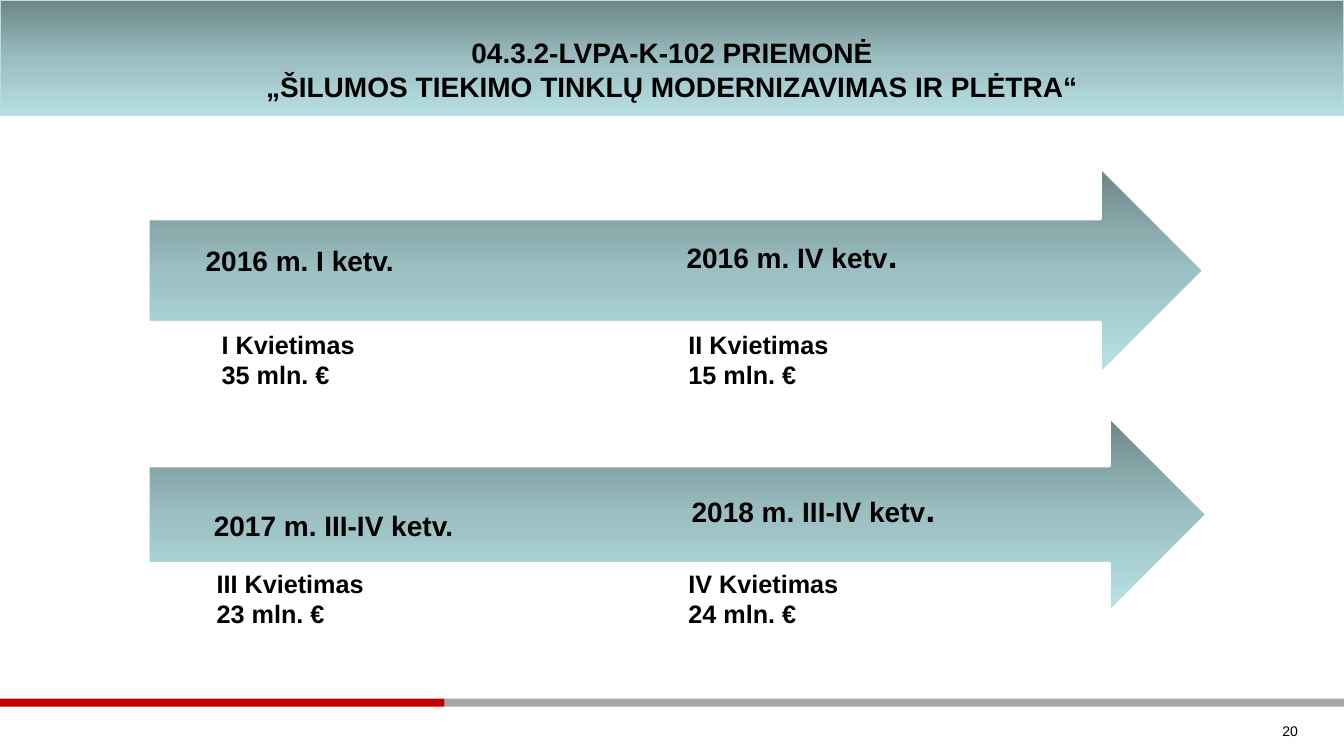
from copy import deepcopy

from pptx import Presentation
from pptx.dml.color import RGBColor
from pptx.enum.shapes import MSO_SHAPE
from pptx.enum.text import MSO_ANCHOR, MSO_AUTO_SIZE, PP_ALIGN
from pptx.util import Inches, Pt

RECT, ARROW = MSO_SHAPE.RECTANGLE, MSO_SHAPE.RIGHT_ARROW
TOP, MIDDLE = MSO_ANCHOR.TOP, MSO_ANCHOR.MIDDLE
LEFT, CENTER, RIGHT = PP_ALIGN.LEFT, PP_ALIGN.CENTER, PP_ALIGN.RIGHT
FIXED = MSO_AUTO_SIZE.NONE


def rgb(value):
    return RGBColor.from_string(value)


def add_text(p, text, font="Arial", size=18, bold=True, color="000000"):
    r = p.add_run()
    r.text = text
    r.font.name, r.font.size, r.font.bold = font, Pt(size), bold
    r.font.color.rgb = rgb(color)


class SlideBuilder:
    TITLE_COLORS = ("6D8587", "9ABDC0", "B7E0E4")
    ARROW_COLORS = ("6D8688", "9BBFC2", "B8E3E6")

    def __init__(self, prs):
        self.s = prs.slides.add_slide(prs.slide_layouts[5])

    def gradient(self, sp, colors, line, width):
        """Vertical three-colour gradient, darkest at the top."""
        sp.fill.gradient()
        sp.fill.gradient_angle = 270
        first = sp._element.spPr.gradFill.gsLst[0]
        first.addnext(deepcopy(first))
        for stop, color, position in zip(sp.fill.gradient_stops, colors, (0, 0.5, 1)):
            stop.color.rgb = rgb(color)
            stop.position = position
        sp.line.color.rgb = rgb(line)
        sp.line.width = Pt(width)

    def title(self, lines, x, y, w, h):
        sp = self.s.shapes.title
        sp.left, sp.top, sp.width, sp.height = map(Inches, (x, y, w, h))
        self.gradient(sp, self.TITLE_COLORS, "BADDE1", 0.75)
        tf = sp.text_frame
        tf.auto_size, tf.vertical_anchor = FIXED, MIDDLE
        tf.margin_top, tf.margin_bottom = Inches(0.28), Inches(0.05)
        p = tf.paragraphs[0]
        p.alignment = CENTER
        for i, line in enumerate(lines):
            if i:
                p.add_line_break()
            add_text(p, line, size=20)

    def shape(self, kind, x, y, w, h):
        sp = self.s.shapes.add_shape(kind, *map(Inches, (x, y, w, h)))
        sp.shadow.inherit = False
        return sp

    def bar(self, x, y, w, h, color):
        sp = self.shape(RECT, x, y, w, h)
        sp.fill.solid()
        sp.fill.fore_color.rgb = rgb(color)
        sp.line.fill.background()

    def arrow(self, x, y, w, h):
        self.gradient(self.shape(ARROW, x, y, w, h), self.ARROW_COLORS, "FFFFFF", 2)

    def box(self, x, y, w, h, anchor=TOP):
        tf = self.s.shapes.add_textbox(*map(Inches, (x, y, w, h))).text_frame
        tf.word_wrap, tf.vertical_anchor = True, anchor
        return tf

    def period(self, text, x, y, w, h, end=""):
        """Quarter label on an arrow, with an optional larger full stop."""
        tf = self.box(x, y, w, h, MIDDLE)
        tf.margin_left = tf.margin_right = 0
        tf.margin_top = tf.margin_bottom = Inches(0.22)
        p = tf.paragraphs[0]
        p.line_spacing = 0.9
        add_text(p, text, size=20)
        if end:
            add_text(p, end, size=25)

    def call(self, name, amount, x, y, w):
        tf = self.box(x, y, w, 0.71)
        add_text(tf.paragraphs[0], name)
        add_text(tf.add_paragraph(), amount)

    def page_number(self, text, x, y, w, h):
        p = self.box(x, y, w, h, MIDDLE).paragraphs[0]
        p.alignment = RIGHT
        add_text(p, text, size=10, bold=False)


def main():
    prs = Presentation()
    prs.slide_width, prs.slide_height = Inches(13.33), Inches(7.5)
    slide = SlideBuilder(prs)

    # Title band
    slide.title(("04.3.2-LVPA-K-102 PRIEMONĖ",
                 "„ŠILUMOS TIEKIMO TINKLŲ MODERNIZAVIMAS IR PLĖTRA“"),
                0, 0, 13.33, 1.15)

    # Footer
    slide.bar(0, 6.93, 4.41, 0.08, "C00000")
    slide.bar(4.41, 6.93, 8.92, 0.08, "A6A6A6")
    slide.page_number("20", 9.86, 7.01, 3.11, 0.49)

    # Timeline 2016
    slide.arrow(1.47, 1.66, 10.47, 2.05)
    slide.period("2016 m. I ketv.", 2.04, 1.99, 3.23, 1.22)
    slide.period("2016 m. IV ketv", 6.81, 2.04, 2.34, 1.02, end=".")
    slide.call("I Kvietimas", "35 mln. €", 2.1, 3.22, 3.09)
    slide.call("II Kvietimas", "15 mln. €", 6.73, 3.22, 2.46)

    # Timeline 2017–2018
    slide.arrow(1.47, 4.14, 10.5, 1.93)
    slide.period("2017 m. III-IV ketv.", 2.12, 4.62, 2.89, 1.22)
    slide.period("2018 m. III-IV ketv", 6.86, 4.61, 3.3, 0.93, end=".")
    slide.call("III Kvietimas", "23 mln. €", 2.05, 5.59, 2.48)
    slide.call("IV Kvietimas", "24 mln. €", 6.73, 5.59, 2.37)

    prs.save("out.pptx")


if __name__ == "__main__":
    main()
